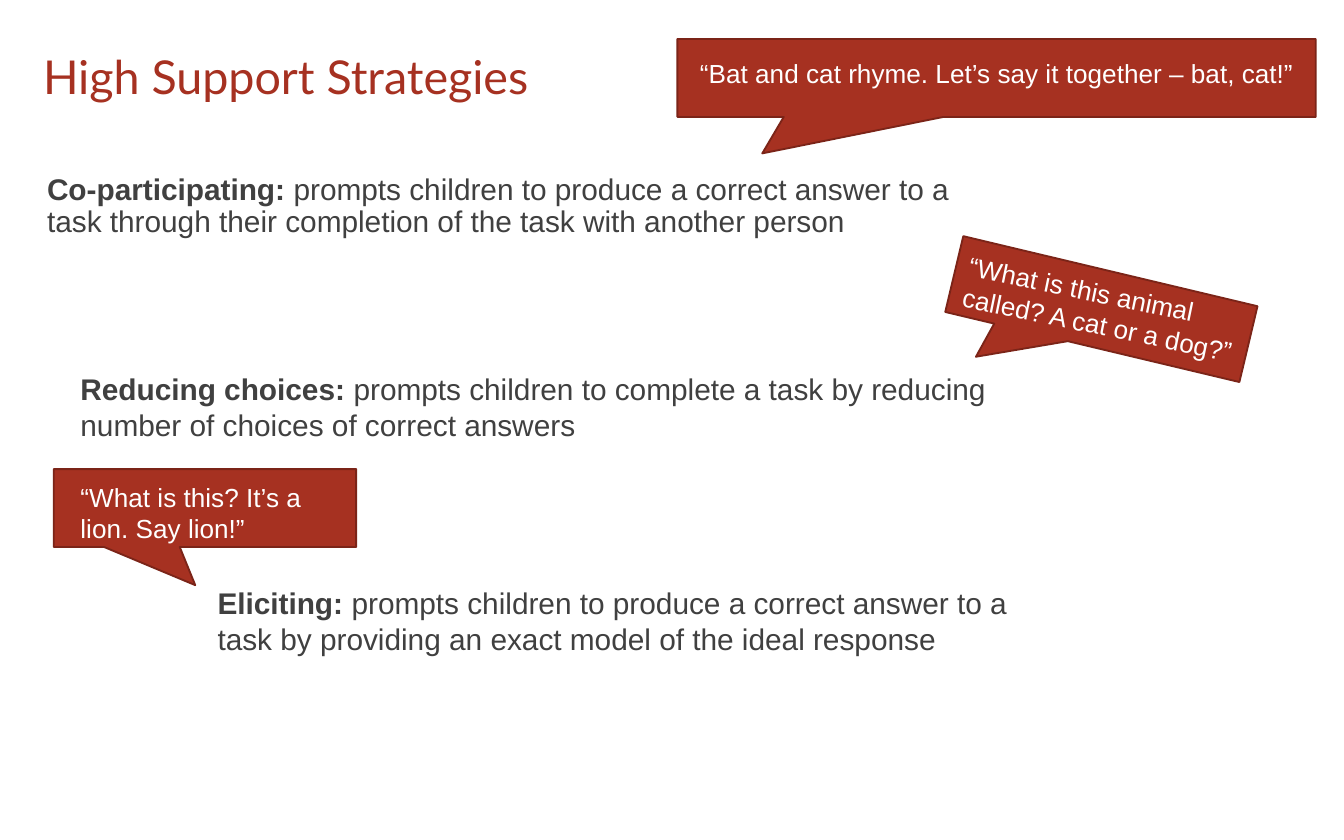
import pptx
import pptx.util
import pptx.dml.color
import pptx.enum.shapes
import pptx.enum.text
import pptx.oxml.ns
from pptx.util import Inches

COLORS = {"red": "A63121", "outline": "7B2418", "text": "404040", "white": "FFFFFF"}


def color(name):
    return pptx.dml.color.RGBColor.from_string(COLORS[name])


class SlideBuilder:
    """Holds the style and the current slide."""

    heading_font, text_font = "Lato", "Arial"
    title_size, body_size, quote_size = 25, 16, 14

    def __init__(self, presentation):
        self.slide = presentation.slides.add_slide(presentation.slide_layouts[1])

    def style(self, run, size, color_name, font=text_font, bold=False):
        run.font.name = font
        run.font.size = pptx.util.Pt(size)
        run.font.bold = bold
        run.font.color.rgb = color(color_name)

    def place(self, shape, left, top, width, height):
        shape.left, shape.top = Inches(left), Inches(top)
        shape.width, shape.height = Inches(width), Inches(height)

    def fit_placeholder(self, shape, box, anchor):
        self.place(shape, *box)
        frame = shape.text_frame
        frame.auto_size = pptx.enum.text.MSO_AUTO_SIZE.NONE
        frame.vertical_anchor = anchor
        frame.margin_left = frame.margin_right = Inches(0.08)
        frame.margin_top = frame.margin_bottom = Inches(0.04)
        paragraph = frame.paragraphs[0]
        paragraph.alignment = pptx.enum.text.PP_ALIGN.LEFT
        paragraph.line_spacing = 0.9
        paragraph.space_before = pptx.util.Pt(0)
        return paragraph

    def title(self, text, box):
        shape = self.slide.shapes.title
        shape.text_frame.text = text
        paragraph = self.fit_placeholder(shape, box, pptx.enum.text.MSO_ANCHOR.BOTTOM)
        self.style(paragraph.runs[0], self.title_size, "red", self.heading_font)

    def definition(self, paragraph, term, meaning):
        for text, bold in ((term + ": ", True), (meaning, False)):
            run = paragraph.add_run()
            run.text = text
            self.style(run, self.body_size, "text", bold=bold)

    def body(self, term, meaning, box):
        shape = self.slide.placeholders[1]
        paragraph = self.fit_placeholder(shape, box, pptx.enum.text.MSO_ANCHOR.TOP)
        # No bullet and no hanging indent
        properties = paragraph._p.get_or_add_pPr()
        properties.set("marL", "0")
        properties.set("indent", "0")
        properties.append(properties.makeelement(pptx.oxml.ns.qn("a:buNone"), {}))
        self.definition(paragraph, term, meaning)

    def text_box(self, box, rotation=0):
        shape = self.slide.shapes.add_textbox(*map(Inches, box))
        shape.rotation = rotation
        shape.text_frame.word_wrap = True
        shape.text_frame.auto_size = pptx.enum.text.MSO_AUTO_SIZE.SHAPE_TO_FIT_TEXT
        return shape.text_frame.paragraphs[0]

    def definition_box(self, term, meaning, box):
        self.definition(self.text_box(box), term, meaning)

    def quote(self, text, box, rotation=0):
        paragraph = self.text_box(box, rotation)
        paragraph.text = text
        self.style(paragraph.runs[0], self.quote_size, "white")

    def callout(self, box, tip, rotation=0):
        shape = self.slide.shapes.add_shape(
            pptx.enum.shapes.MSO_SHAPE.RECTANGULAR_CALLOUT, *map(Inches, box))
        shape.adjustments[0], shape.adjustments[1] = tip
        shape.rotation = rotation
        shape.shadow.inherit = False
        shape.fill.solid()
        shape.fill.fore_color.rgb = color("red")
        shape.line.color.rgb = color("outline")
        shape.line.width = pptx.util.Pt(1)


def main():
    presentation = pptx.Presentation()
    presentation.slide_width, presentation.slide_height = Inches(10), Inches(6.25)
    builder = SlideBuilder(presentation)

    # Title and first strategy
    builder.title("High Support Strategies", (0.24, 0.28, 8.06, 0.54))
    builder.body("Co-participating",
                 "prompts children to produce a correct answer to a task through "
                 "their completion of the task with another person",
                 (0.27, 1.26, 6.95, 0.53))

    # Speech callouts
    builder.callout((5.04, 0.29, 4.75, 0.58), (-0.367, 0.968))
    builder.callout((7.07, 2.01, 2.25, 0.58), (-0.367, 0.968), rotation=13.4)
    builder.callout((0.4, 3.49, 2.25, 0.58), (-0.032, 0.99))

    # Other strategies
    builder.definition_box("Reducing choices",
                           "prompts children to complete a task by reducing number "
                           "of choices of correct answers",
                           (0.5, 2.71, 6.99, 0.64))
    builder.definition_box("Eliciting",
                           "prompts children to produce a correct answer to a task "
                           "by providing an exact model of the ideal response",
                           (1.52, 4.3, 6.31, 0.64))

    # Quotes over the callouts
    builder.quote("“Bat and cat rhyme. Let’s say it together – bat, cat!”",
                  (5.11, 0.38, 4.93, 0.34))
    builder.quote("“What is this animal called? A cat or a dog?”",
                  (7.07, 2.02, 2.3, 0.57), rotation=11.6)
    builder.quote("“What is this? It’s a lion. Say lion!”", (0.5, 3.53, 2.15, 0.57))

    presentation.save("out.pptx")


if __name__ == "__main__":
    main()
